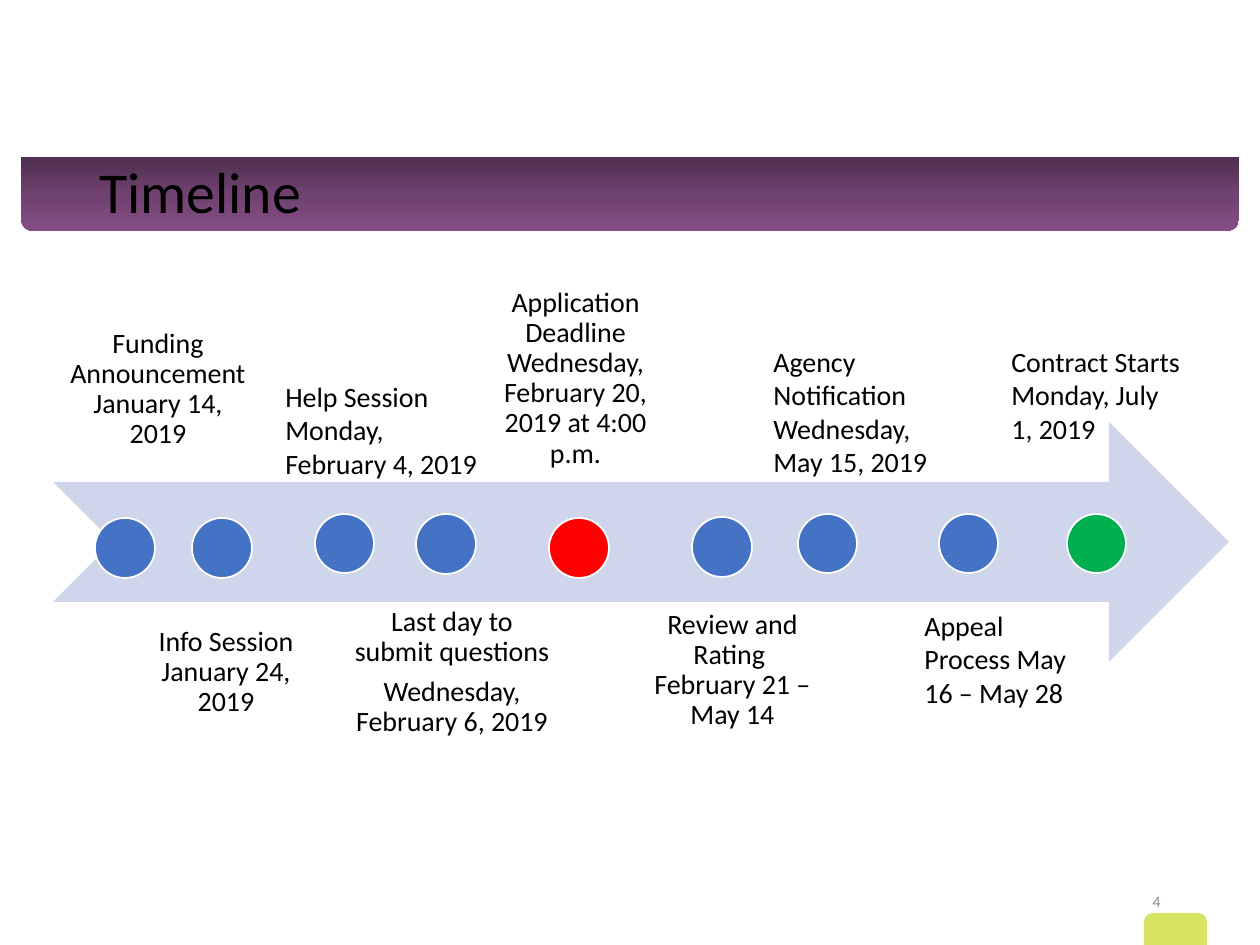
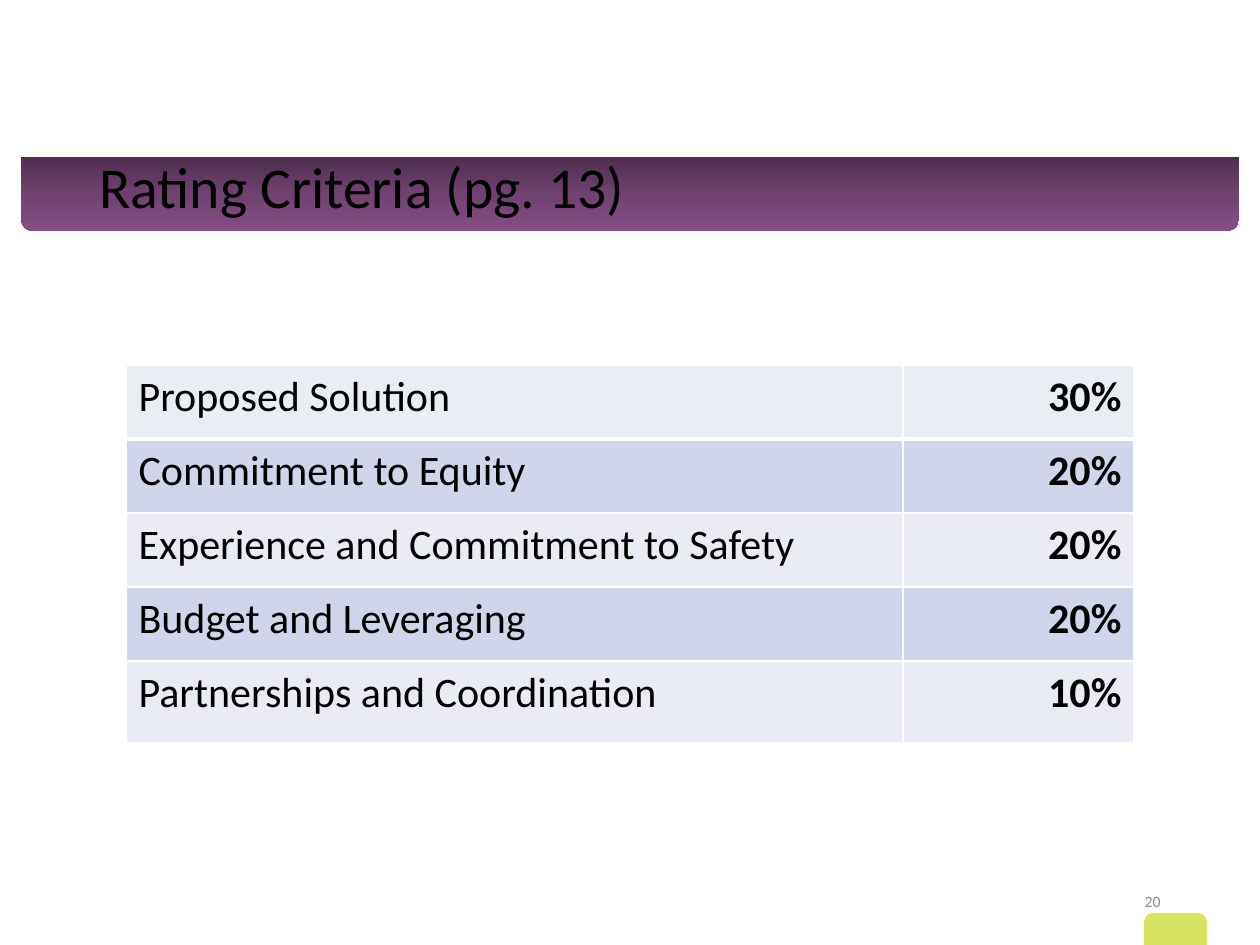
from dataclasses import dataclass

from copy import deepcopy
from lxml.etree import SubElement
from pptx import Presentation
from pptx.dml.color import RGBColor
from pptx.enum.shapes import MSO_SHAPE
from pptx.enum.text import MSO_ANCHOR, PP_ALIGN
from pptx.oxml.ns import qn
from pptx.util import Emu, Pt

PX_PER_INCH = 126


@dataclass(frozen=True)
class Theme:
    font: str = "Calibri"
    title_size: int = 33
    table_size: int = 24
    label_size: int = 16
    number_size: int = 9
    text: str = "000000"
    muted: str = "8C8C8C"
    white: str = "FFFFFF"
    band: tuple[str, ...] = ("4F2E4F", "704270", "854E85")
    tab: str = "D7E462"
    arrow: str = "CFD5EA"
    step: str = "4472C4"
    deadline: str = "FF0000"
    start: str = "00B050"
    first_row: str = "E9EDF4"
    rows: tuple[str, str] = ("E9EBF5", "CFD5EA")


THEME = Theme()


@dataclass(frozen=True)
class Box:
    x: int
    y: int
    w: int
    h: int


@dataclass(frozen=True)
class Dot:
    x: int
    y: int
    size: int
    color: str = THEME.step


@dataclass(frozen=True)
class Label:
    text: str
    box: Box
    centred: bool = False
    anchor: MSO_ANCHOR = MSO_ANCHOR.TOP


@dataclass(frozen=True)
class Criterion:
    name: str
    weight: str


def px(n: int) -> Emu:
    return Emu(round(n * 914400 / PX_PER_INCH))


def place(box: Box) -> tuple[Emu, Emu, Emu, Emu]:
    return px(box.x), px(box.y), px(box.w), px(box.h)


# Text and shapes
def write(tf, text: str, *, size: int, color: str = THEME.text, bold: bool = False,
          align=PP_ALIGN.LEFT, anchor=None, inset: int | None = None,
          spacing: float | None = None, after: float | None = None) -> None:
    """Fill a text frame: | parts paragraphs, a newline breaks a line."""
    tf.word_wrap = True
    if anchor is not None:
        tf.vertical_anchor = anchor
    if inset is not None:
        tf.margin_left = tf.margin_right = tf.margin_top = tf.margin_bottom = px(inset)
    for i, part in enumerate(text.split("|")):
        p = tf.add_paragraph() if i else tf.paragraphs[0]
        p.text = part
        p.alignment = align
        p.line_spacing = spacing
        if after is not None:
            p.space_after = Pt(after)
        for r in p.runs:
            r.font.name = THEME.font
            r.font.size = Pt(size)
            r.font.bold = bold
            r.font.color.rgb = RGBColor.from_string(color)


def add_text(s, box: Box, text: str, **fmt) -> None:
    write(s.shapes.add_textbox(*place(box)).text_frame, text, **fmt)


def add_shape(s, kind, box: Box, fill: str | None = None, line: str | None = None):
    sp = s.shapes.add_shape(kind, *place(box))
    sp.shadow.inherit = False
    if fill:
        sp.fill.solid()
        sp.fill.fore_color.rgb = RGBColor.from_string(fill)
    if line:
        sp.line.color.rgb = RGBColor.from_string(line)
        sp.line.width = Pt(1)
    else:
        sp.line.fill.background()
    return sp


def fill_gradient(sp, colors: tuple[str, ...]) -> None:
    """Spread the colours evenly from top to bottom."""
    sp.fill.gradient()
    sp.fill.gradient_angle = 270
    stop_list = sp._element.spPr.find(".//" + qn("a:gsLst"))
    while len(stop_list) < len(colors):
        stop_list.append(deepcopy(stop_list[0]))
    for i, (stop, color) in enumerate(zip(sp.fill.gradient_stops, colors)):
        stop.position = i / (len(colors) - 1)
        stop.color.rgb = RGBColor.from_string(color)


# Shared frame: title band, corner tab and page number
def add_base_slide(prs, title: str, title_box: Box, number: str):
    s = prs.slides.add_slide(prs.slide_layouts[6])
    band = add_shape(s, MSO_SHAPE.ROUND_2_SAME_RECTANGLE, Box(21, 157, 1218, 74))
    band.adjustments[0], band.adjustments[1] = 0, 0.17
    fill_gradient(band, THEME.band)
    add_shape(s, MSO_SHAPE.ROUND_2_SAME_RECTANGLE, Box(1144, 913, 63, 53), THEME.tab)
    add_text(s, title_box, title, size=THEME.title_size,
             anchor=MSO_ANCHOR.MIDDLE, spacing=0.9)
    add_text(s, Box(890, 876, 283, 50), number, size=THEME.number_size,
             color=THEME.muted, align=PP_ALIGN.RIGHT, anchor=MSO_ANCHOR.MIDDLE)
    return s


# Timeline
DOTS = [
    Dot(95, 518, 60), Dot(192, 518, 60), Dot(315, 514, 59), Dot(416, 514, 60),
    Dot(549, 518, 60, THEME.deadline), Dot(692, 517, 60), Dot(798, 514, 59),
    Dot(939, 514, 59), Dot(1067, 514, 59, THEME.start),
]
LABELS = [
    Label("Funding Announcement January 14, 2019", Box(53, 350, 210, 115),
          True, MSO_ANCHOR.BOTTOM),
    Label("Info Session January 24, 2019", Box(127, 612, 198, 103), True),
    Label("Help Session Monday, February 4, 2019", Box(273, 373, 227, 115)),
    Label("Last day to submit questions|Wednesday, February 6, 2019",
          Box(336, 621, 232, 132), True, MSO_ANCHOR.BOTTOM),
    Label("Application Deadline Wednesday, February 20, 2019 at 4:00 p.m.",
          Box(479, 273, 193, 125), True),
    Label("Review and Rating \nFebruary 21 – May 14", Box(631, 660, 203, 86),
          True, MSO_ANCHOR.BOTTOM),
    Label("Agency Notification Wednesday, May 15, 2019", Box(761, 338, 193, 149)),
    Label("Appeal Process May 16 – May 28", Box(912, 602, 193, 115)),
    Label("Contract Starts Monday, July 1, 2019", Box(999, 338, 199, 115)),
]


def add_label(s, label: Label) -> None:
    fmt = dict(align=PP_ALIGN.CENTER, inset=15, spacing=0.9, after=5.6) if label.centred else {}
    add_text(s, label.box, label.text, size=THEME.label_size, anchor=label.anchor, **fmt)


def build_timeline(prs) -> None:
    s = add_base_slide(prs, "Timeline", Box(87, 157, 1086, 76), "4")
    add_shape(s, MSO_SHAPE.NOTCHED_RIGHT_ARROW, Box(53, 422, 1176, 240), THEME.arrow)
    for dot in DOTS:
        add_shape(s, MSO_SHAPE.OVAL, Box(dot.x, dot.y, dot.size, dot.size),
                  dot.color, THEME.white)
    for label in LABELS:
        add_label(s, label)


# Rating table
CRITERIA = [
    Criterion("Proposed Solution", "30%"),
    Criterion("Commitment to Equity", "20%"),
    Criterion("Experience and Commitment to Safety", "20%"),
    Criterion("Budget and Leveraging", "20%"),
    Criterion("Partnerships and Coordination", "10%"),
]
COLUMN_WIDTHS = (777, 231)
ROW_HEIGHTS = (74, 74, 74, 74, 82)


def set_borders(cell, top: int, bottom: int) -> None:
    tc_pr = cell._tc.get_or_add_tcPr()
    for side, width in (("L", 1), ("R", 1), ("T", top), ("B", bottom)):
        ln = SubElement(tc_pr, qn(f"a:ln{side}"), w=str(Pt(width)))
        SubElement(SubElement(ln, qn("a:solidFill")), qn("a:srgbClr"), val=THEME.white)


def build_rating(prs) -> None:
    s = add_base_slide(prs, "Rating Criteria (pg. 13)", Box(87, 146, 1086, 87), "20")
    box = Box(126, 365, sum(COLUMN_WIDTHS), sum(ROW_HEIGHTS))
    table = s.shapes.add_table(len(CRITERIA), len(COLUMN_WIDTHS), *place(box)).table
    table.first_row = table.horz_banding = False
    for column, width in zip(table.columns, COLUMN_WIDTHS):
        column.width = px(width)
    for i, criterion in enumerate(CRITERIA):
        table.rows[i].height = px(ROW_HEIGHTS[i])
        fill = THEME.rows[i % 2] if i else THEME.first_row
        for j, text in enumerate((criterion.name, criterion.weight)):
            cell = table.cell(i, j)
            set_borders(cell, top=3 if i == 1 else 1, bottom=3 if i == 0 else 1)
            cell.fill.solid()
            cell.fill.fore_color.rgb = RGBColor.from_string(fill)
            write(cell.text_frame, text, size=THEME.table_size, bold=j == 1,
                  align=PP_ALIGN.RIGHT if j else PP_ALIGN.LEFT)


def main() -> None:
    prs = Presentation()
    prs.slide_width, prs.slide_height = px(1260), px(945)
    build_timeline(prs)
    build_rating(prs)
    prs.save("out.pptx")


if __name__ == "__main__":
    main()
